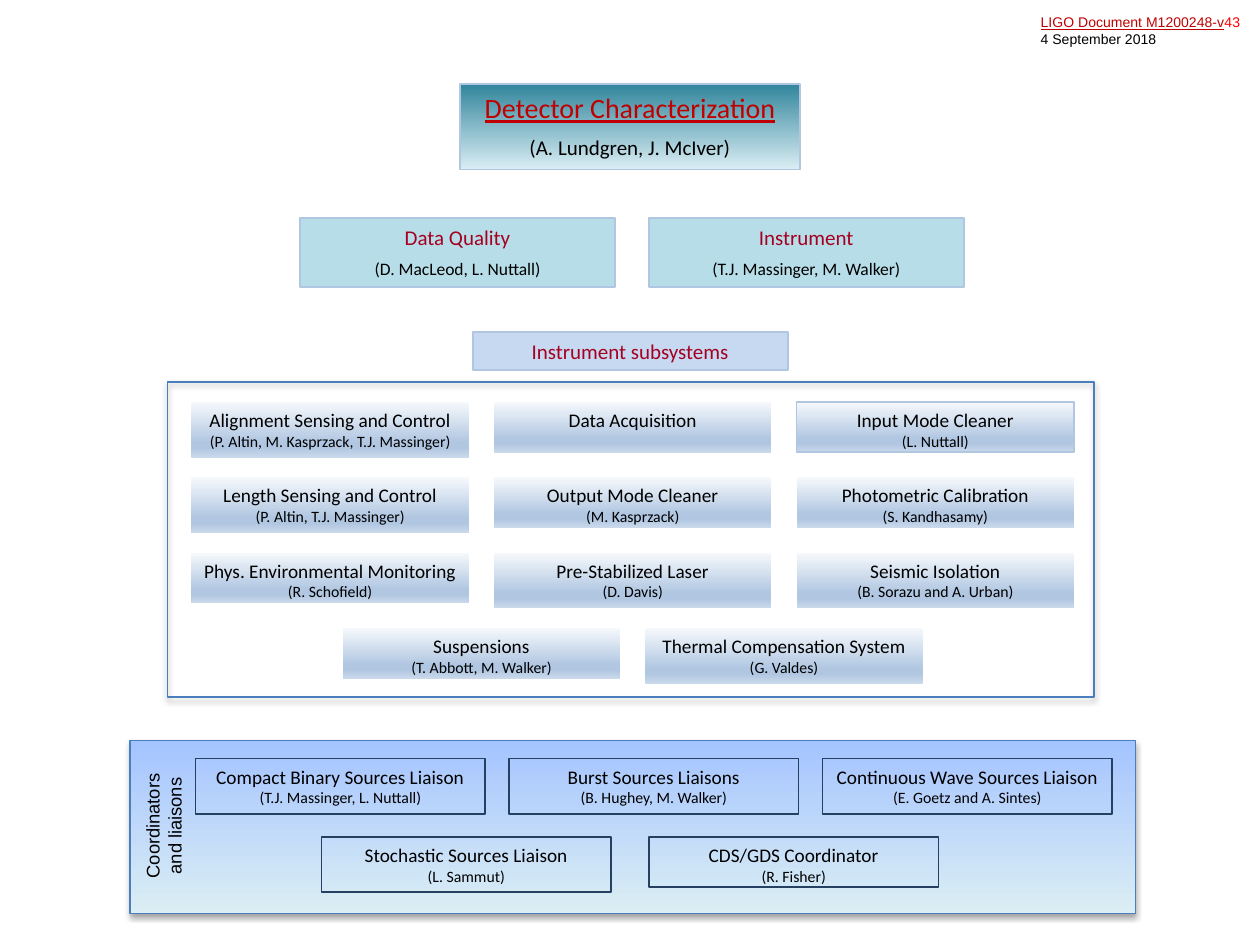
from dataclasses import dataclass

from pptx import Presentation
from pptx.dml.color import RGBColor
from pptx.enum.shapes import MSO_SHAPE
from pptx.enum.text import MSO_ANCHOR, PP_ALIGN
from pptx.oxml import parse_xml
from pptx.oxml.ns import nsdecls
from pptx.util import Cm, Pt


@dataclass(frozen=True)
class Theme:
    body: str = "Calibri"
    plain: str = "Arial"
    ink: str = "000000"
    red: str = "C00000"
    bright: str = "FF0000"
    wine: str = "A50021"
    edge: str = "B0C6E1"
    frame: str = "4B7EBC"
    navy: str = "254061"
    aqua: str = "B7DEE8"
    pale: str = "C6D9F1"
    teal: tuple = ((0, "31859C"), (100, "DBEEF4"))
    steel: tuple = ((0, "F6F9FC"), (74, "B0C6E1"), (83, "B0C6E1"), (100, "CAD9EB"))
    sky: tuple = ((0, "A4C4FF"), (100, "DBEEF4"))
    title: float = 16
    head: float = 12
    lead: float = 10
    unit: float = 11
    name: float = 9
    side: float = 10.5
    note: float = 8


class Chart:
    def __init__(self, deck, theme):
        self.theme = theme
        self.slide = deck.slides.add_slide(deck.slide_layouts[5])
        self.home = self.slide.shapes

    def group(self):
        """Send the elements that follow into a new group."""
        self.home = self.slide.shapes.add_group_shape().shapes

    def paint(self, shape, fill, line, width=1):
        """Fill with one colour, a top-down gradient (tuple of stops) or nothing."""
        if isinstance(fill, tuple):
            stops = "".join(
                f'<a:gs pos="{pos * 1000}"><a:srgbClr val="{tone}"/></a:gs>'
                for pos, tone in fill)
            shape.element.spPr.append(parse_xml(
                f'<a:gradFill {nsdecls("a")} rotWithShape="1"><a:gsLst>{stops}</a:gsLst>'
                '<a:lin ang="5400000" scaled="0"/></a:gradFill>'))
        elif fill:
            shape.fill.solid()
            shape.fill.fore_color.rgb = RGBColor.from_string(fill)
        else:
            shape.fill.background()
        if line:
            shape.line.color.rgb = RGBColor.from_string(line)
            shape.line.width = Pt(width)
        else:
            shape.line.fill.background()

    def style(self, run, size, tone, font, under=False):
        run.font.size = Pt(size)
        run.font.color.rgb = RGBColor.from_string(tone)
        run.font.name = font
        run.font.underline = under

    def letter(self, shape, text, looks, font, align=PP_ALIGN.CENTER, gap=0):
        """Set the lines of text; looks holds a size and colour for each line."""
        frame = shape.text_frame
        frame.word_wrap = True
        frame.vertical_anchor = MSO_ANCHOR.TOP
        frame.margin_left = frame.margin_right = Cm(0.1)
        frame.margin_top = frame.margin_bottom = Cm(0.13)
        frame.text = text
        for row, (para, (size, tone)) in enumerate(zip(frame.paragraphs, looks)):
            para.alignment = align
            para.space_before = Pt(gap * size if row else 0)
            for run in para.runs:
                self.style(run, size, tone, font)

    def rect(self, x, y, w, h, fill, line, width=1):
        shape = self.home.add_shape(MSO_SHAPE.RECTANGLE, Cm(x), Cm(y), Cm(w), Cm(h))
        self.paint(shape, fill, line, width)
        shape.shadow.inherit = False
        return shape

    def panel(self, x, y, w, h, fill, width):
        shape = self.rect(x, y, w, h, fill, self.theme.frame, width)
        shape.element.spPr[-1].append(parse_xml(
            f'<a:outerShdw {nsdecls("a")} blurRad="40000" dist="23000" dir="5400000" '
            'rotWithShape="0"><a:srgbClr val="000000"><a:alpha val="35000"/>'
            '</a:srgbClr></a:outerShdw>'))

    def title(self, x, y, w, h, text):
        t = self.theme
        shape = self.slide.shapes.title
        shape.left, shape.top, shape.width, shape.height = map(Cm, (x, y, w, h))
        self.paint(shape, t.teal, t.edge)
        self.letter(shape, text, [(t.title, t.red), (t.head, t.ink)], t.body, gap=0.5)
        shape.text_frame.paragraphs[0].runs[0].font.underline = True

    def lead(self, x, y, h, text, fill):
        t = self.theme
        shape = self.rect(x, y, 6.35, h, fill, t.edge)
        self.letter(shape, text, [(t.head, t.wine), (t.lead, t.ink)], t.body, gap=0.5)

    def unit(self, x, y, w, h, text, fill, line):
        t = self.theme
        shape = self.rect(x, y, w, h, fill, line)
        self.letter(shape, text, [(t.unit, t.ink), (t.name, t.ink)], t.body)

    def label(self, x, y, w, h, text, looks, align, turn=0):
        box = self.home.add_textbox(Cm(x), Cm(y), Cm(w), Cm(h))
        box.rotation = turn
        self.letter(box, text, looks, self.theme.plain, align)
        return box


TALL, LOW = 1.12, 1.02

# Each row: left edge, then the text and height of its boxes
UNITS = [
    (3.86, [("Alignment Sensing and Control\n(P. Altin, M. Kasprzack, T.J. Massinger)", TALL),
            ("Data Acquisition", LOW),
            ("Input Mode Cleaner\n(L. Nuttall)", LOW)]),
    (3.86, [("Length Sensing and Control\n(P. Altin, T.J. Massinger)", TALL),
            ("Output Mode Cleaner\n(M. Kasprzack)", LOW),
            ("Photometric Calibration\n(S. Kandhasamy)", LOW)]),
    (3.86, [("Phys. Environmental Monitoring\n(R. Schofield)", LOW),
            ("Pre-Stabilized Laser\n(D. Davis)", TALL),
            ("Seismic Isolation\n(B. Sorazu and A. Urban)", TALL)]),
    (6.91, [("Suspensions\n(T. Abbott, M. Walker)", LOW),
            ("Thermal Compensation System\n(G. Valdes)", TALL)]),
]

# Each row: left edge, step, then the text and height of its boxes
POSTS = [
    (3.94, 6.32, [("Compact Binary Sources Liaison\n(T.J. Massinger, L. Nuttall)", TALL),
                  ("Burst Sources Liaisons\n(B. Hughey, M. Walker)", TALL),
                  ("Continuous Wave Sources Liaison\n(E. Goetz and A. Sintes)", TALL)]),
    (6.48, 6.6, [("Stochastic Sources Liaison\n(L. Sammut)", TALL),
                 ("CDS/GDS Coordinator\n(R. Fisher)", LOW)]),
]


def main():
    deck = Presentation()
    deck.slide_width, deck.slide_height = Cm(25.4), Cm(19.05)
    t = Theme()
    chart = Chart(deck, t)

    note = chart.label(20.73, 0.15, 4.6, 0.94, "LIGO Document M1200248-v\n4 September 2018",
                       [(t.note, t.red), (t.note, t.ink)], PP_ALIGN.LEFT)
    note.text_frame.margin_left = Cm(0.25)
    first = note.text_frame.paragraphs[0]
    first.runs[0].font.underline = True
    count = first.add_run()
    count.text = "43"
    chart.style(count, t.note, t.bright, t.plain)

    chart.title(9.27, 1.7, 6.86, 1.72, "Detector Characterization\n(A. Lundgren, J. McIver)")
    chart.lead(6.05, 4.39, 1.4, "Data Quality\n(D. MacLeod, L. Nuttall)", t.aqua)
    chart.lead(13.08, 4.39, 1.4, "Instrument\n(T.J. Massinger, M. Walker)", t.aqua)
    chart.lead(9.53, 6.69, 0.77, "Instrument subsystems", t.pale)

    chart.group()
    chart.panel(3.38, 7.7, 18.67, 6.35, None, 1)
    for row, (left, units) in enumerate(UNITS):
        for col, (text, high) in enumerate(units):
            line = t.edge if text.startswith("Input") else None
            chart.unit(left + col * 6.1, 8.1 + row * 1.52, 5.59, high, text, t.steel, line)

    chart.group()
    chart.panel(2.62, 14.93, 20.27, 3.48, t.sky, 0.75)
    for row, (left, step, posts) in enumerate(POSTS):
        for col, (text, high) in enumerate(posts):
            chart.unit(left + col * step, 15.29 + row * 1.58, 5.84, high, text, None, t.navy)
    chart.label(1.55, 16.08, 3.48, 1.14, "Coordinators\nand liaisons",
                [(t.side, t.ink)] * 2, PP_ALIGN.CENTER, 270)

    deck.save("out.pptx")


if __name__ == "__main__":
    main()
